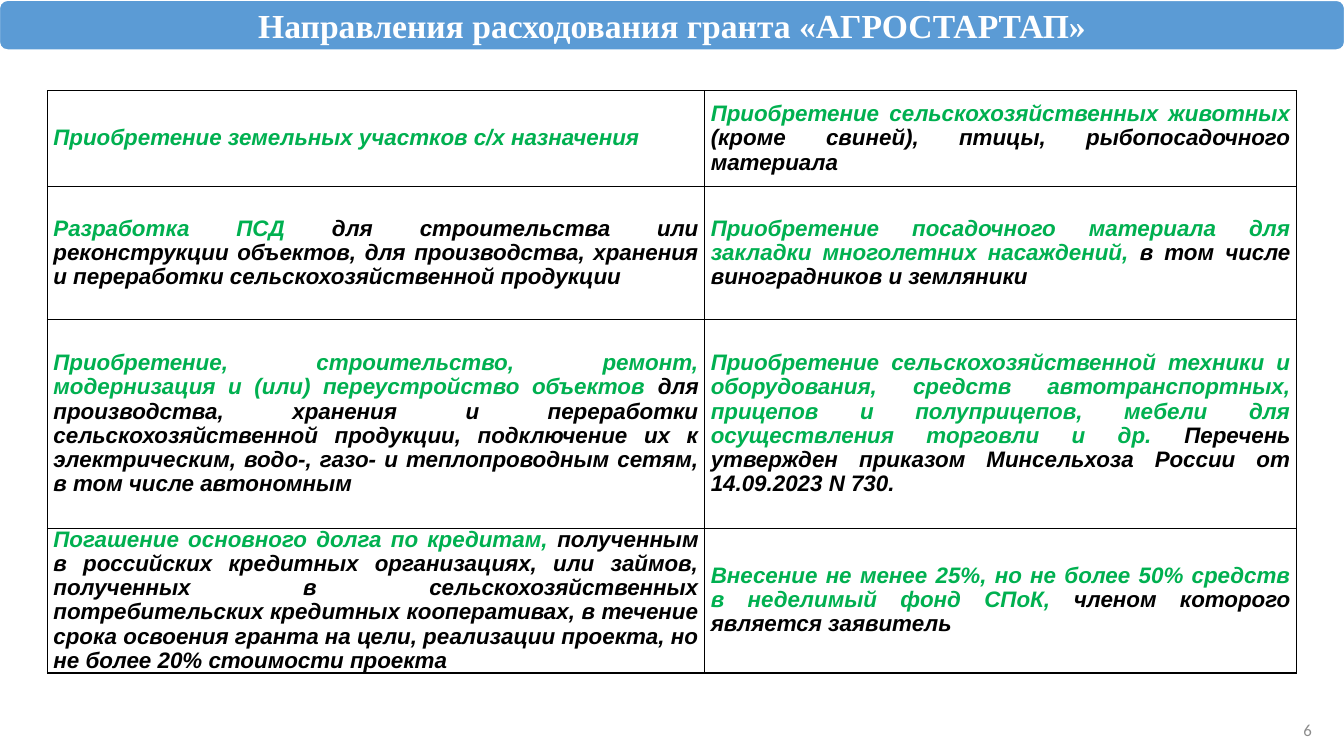
"""Build the slide on spending directions of the «АГРОСТАРТАП» grant."""
from typing import NamedTuple

import lxml.etree
import pptx
import pptx.dml.color
import pptx.enum.shapes
import pptx.enum.text
import pptx.oxml.ns
import pptx.presentation
import pptx.slide
import pptx.table
import pptx.text.text
import pptx.util

Inches = pptx.util.Inches
Pt = pptx.util.Pt
RGBColor = pptx.dml.color.RGBColor
Align = pptx.enum.text.PP_ALIGN
MIDDLE = pptx.enum.text.MSO_ANCHOR.MIDDLE

WHITE = RGBColor(0xFF, 0xFF, 0xFF)
BLACK = RGBColor(0x00, 0x00, 0x00)
BLUE = RGBColor(0x5B, 0x9B, 0xD5)
GREEN = RGBColor(0x00, 0xB0, 0x50)
GRAY = RGBColor(0x8C, 0x8C, 0x8C)


class Direction(NamedTuple):
    purpose: str
    details: str = ""


class Style(NamedTuple):
    font: str
    size: int
    bold: bool = False
    italic: bool = False


TITLE_STYLE = Style("Times New Roman", 24, bold=True)
BODY_STYLE = Style("Arial", 16, bold=True, italic=True)
NUMBER_STYLE = Style("Calibri", 12)

COLUMN_WIDTHS = (6.52, 5.87)
ROW_HEIGHTS = (0.95, 1.32, 2.07, 1.32)

DIRECTIONS = (
    (
        Direction("Приобретение земельных участков с/х назначения"),
        Direction(
            "Приобретение сельскохозяйственных животных",
            " (кроме свиней), птицы, рыбопосадочного материала",
        ),
    ),
    (
        Direction(
            "Разработка ПСД",
            " для строительства или реконструкции объектов, для производства, "
            "хранения и переработки сельскохозяйственной продукции",
        ),
        Direction(
            "Приобретение посадочного материала для закладки многолетних насаждений, ",
            "в том числе виноградников и земляники",
        ),
    ),
    (
        Direction(
            "Приобретение, строительство, ремонт, модернизация и (или) "
            "переустройство объектов",
            " для производства, хранения и переработки сельскохозяйственной "
            "продукции, подключение их к электрическим, водо-, газо- и "
            "теплопроводным сетям, в том числе автономным",
        ),
        Direction(
            "Приобретение сельскохозяйственной техники и оборудования, средств "
            "автотранспортных, прицепов и полуприцепов, мебели для "
            "осуществления торговли и др. ",
            "Перечень утвержден приказом Минсельхоза России от 14.09.2023 N 730.",
        ),
    ),
    (
        Direction(
            "Погашение основного долга по кредитам,",
            " полученным в российских кредитных организациях, или займов, "
            "полученных в сельскохозяйственных потребительских кредитных "
            "кооперативах, в течение срока освоения гранта на цели, реализации "
            "проекта, но не более 20% стоимости проекта",
        ),
        Direction(
            "Внесение не менее 25%, но не более 50% средств в неделимый фонд СПоК, ",
            "членом которого является заявитель",
        ),
    ),
)


def add_run(paragraph: pptx.text.text._Paragraph, text: str, style: Style,
            color: RGBColor) -> None:
    run = paragraph.add_run()
    run.text = text
    run.font.name = style.font
    run.font.size = Pt(style.size)
    run.font.bold = style.bold
    run.font.italic = style.italic
    run.font.color.rgb = color


def add_borders(cell: pptx.table._Cell) -> None:
    qn = pptx.oxml.ns.qn
    properties = cell._tc.get_or_add_tcPr()
    for position, side in enumerate(("a:lnL", "a:lnR", "a:lnT", "a:lnB")):
        border = lxml.etree.Element(qn(side), w=str(Pt(1)))
        fill = lxml.etree.SubElement(border, qn("a:solidFill"))
        lxml.etree.SubElement(fill, qn("a:srgbClr"), val=str(BLACK))
        properties.insert(position, border)


def fill_cell(cell: pptx.table._Cell, direction: Direction) -> None:
    cell.fill.background()
    cell.vertical_anchor = MIDDLE
    cell.margin_left = cell.margin_right = Inches(0.06)
    cell.margin_top = cell.margin_bottom = Inches(0)
    paragraph = cell.text_frame.paragraphs[0]
    paragraph.alignment = Align.JUSTIFY
    paragraph.space_before = Pt(11)
    paragraph.line_spacing = 0.97
    add_run(paragraph, direction.purpose, BODY_STYLE, GREEN)
    if direction.details:
        add_run(paragraph, direction.details, BODY_STYLE, BLACK)
    add_borders(cell)


def add_title(slide: pptx.slide.Slide) -> None:
    banner = slide.shapes.add_shape(
        pptx.enum.shapes.MSO_SHAPE.ROUNDED_RECTANGLE,
        Inches(-0.01), Inches(0), Inches(13.35), Inches(0.5))
    banner.shadow.inherit = False
    banner.fill.solid()
    banner.fill.fore_color.rgb = BLUE
    banner.line.color.rgb = WHITE
    banner.line.width = Pt(1.5)
    banner.text_frame.vertical_anchor = MIDDLE
    paragraph = banner.text_frame.paragraphs[0]
    paragraph.alignment = Align.CENTER
    add_run(paragraph, "Направления расходования гранта «АГРОСТАРТАП»",
            TITLE_STYLE, WHITE)


def add_directions(slide: pptx.slide.Slide) -> None:
    directions = slide.shapes.add_table(
        len(ROW_HEIGHTS), len(COLUMN_WIDTHS), Inches(0.47), Inches(0.9),
        Inches(sum(COLUMN_WIDTHS)), Inches(sum(ROW_HEIGHTS))).table
    directions.first_row = False
    directions.horz_banding = False
    for column, width in zip(directions.columns, COLUMN_WIDTHS):
        column.width = Inches(width)
    for row, height, contents in zip(directions.rows, ROW_HEIGHTS, DIRECTIONS):
        row.height = Inches(height)
        for cell, direction in zip(row.cells, contents):
            fill_cell(cell, direction)


def add_page_number(slide: pptx.slide.Slide) -> None:
    page_number = slide.shapes.add_textbox(
        Inches(10.11), Inches(7.04), Inches(3), Inches(0.4)).text_frame
    page_number.word_wrap = True
    page_number.vertical_anchor = MIDDLE
    paragraph = page_number.paragraphs[0]
    paragraph.alignment = Align.RIGHT
    add_run(paragraph, "6", NUMBER_STYLE, GRAY)


def main() -> None:
    presentation = pptx.Presentation()
    presentation.slide_width = Inches(13.33)
    presentation.slide_height = Inches(7.5)
    slide = presentation.slides.add_slide(presentation.slide_layouts[6])
    add_title(slide)
    add_directions(slide)
    add_page_number(slide)
    presentation.save("out.pptx")


if __name__ == "__main__":
    main()
